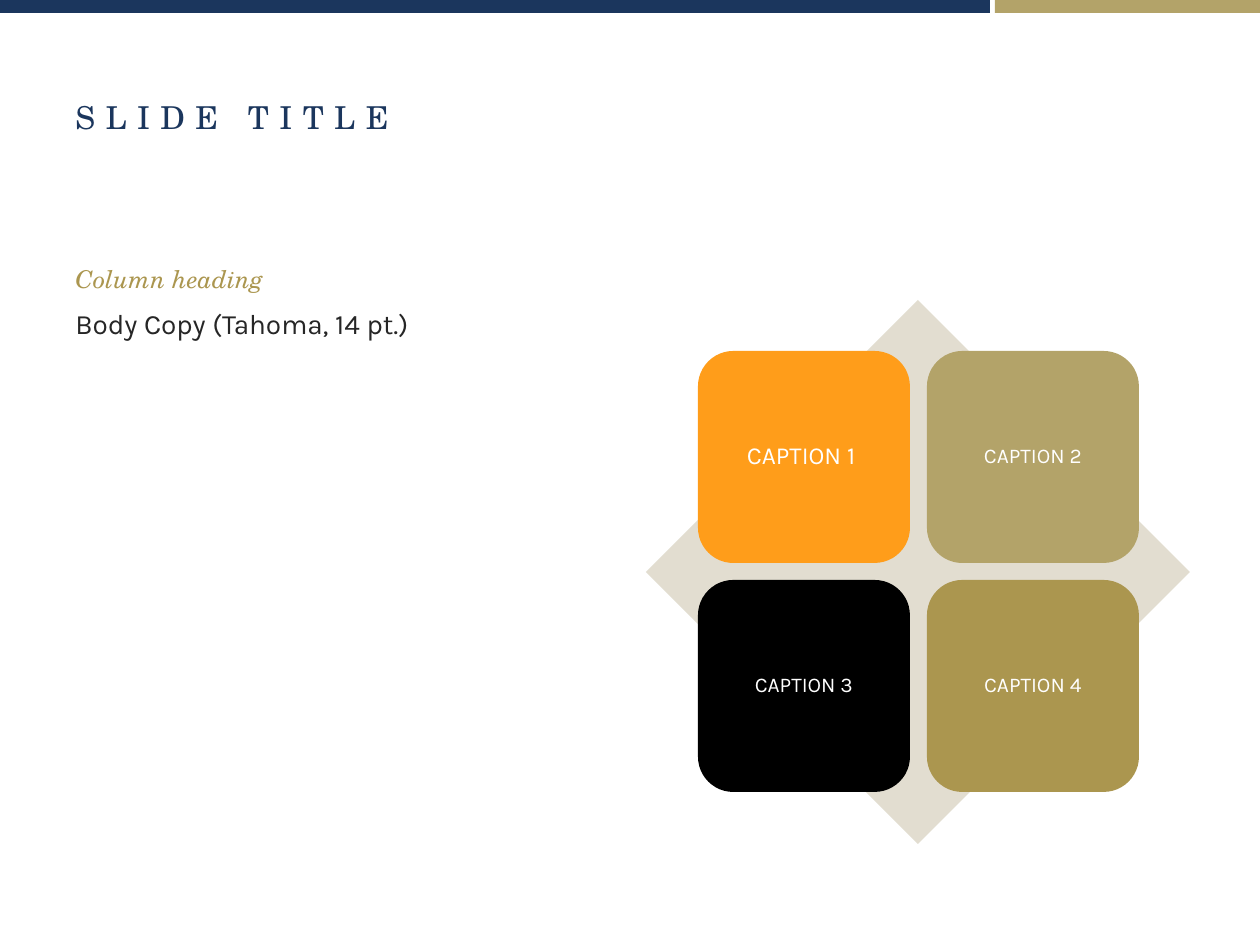
"""Build a title slide with a text column and a four-caption matrix."""
from pptx import Presentation
from pptx.dml.color import RGBColor
from pptx.enum.shapes import MSO_SHAPE
from pptx.enum.text import MSO_ANCHOR, PP_ALIGN
from pptx.util import Emu, Pt

PX = 914400 // 126
NAVY = RGBColor(0x1B, 0x36, 0x5D)
GOLD = RGBColor(0xB3, 0xA3, 0x69)
OCHRE = RGBColor(0xAB, 0x96, 0x4F)
ORANGE = RGBColor(0xFF, 0x9D, 0x1A)
SAND = RGBColor(0xE2, 0xDD, 0xD0)
INK = RGBColor(0x26, 0x26, 0x26)
BLACK = RGBColor(0, 0, 0)
WHITE = RGBColor(0xFF, 0xFF, 0xFF)
SERIF, SANS = "TeX Gyre Schola", "Karla"


def write(frame, text, size=14, font=SANS, color=INK, italic=False,
          spacing=0, align=PP_ALIGN.LEFT, anchor=MSO_ANCHOR.TOP, leading=1.0):
    frame.word_wrap = True
    frame.vertical_anchor = anchor
    para = frame.paragraphs[0]
    para.alignment = align
    para.line_spacing = leading
    run = para.add_run()
    run.text = text
    run.font.size = Pt(size)
    run.font.name = font
    run.font.italic = italic
    run.font.color.rgb = color
    if spacing:
        run.font._element.set("spc", str(spacing * 100))


class Canvas:
    def __init__(self, deck):
        self.slide = deck.slides.add_slide(deck.slide_layouts[6])

    def shape(self, kind, box, fill):
        item = self.slide.shapes.add_shape(kind, *(Emu(n * PX) for n in box))
        item.shadow.inherit = False
        item.fill.solid()
        item.fill.fore_color.rgb = fill
        item.line.fill.background()
        return item

    def text(self, box, words, **style):
        item = self.slide.shapes.add_textbox(*(Emu(n * PX) for n in box))
        write(item.text_frame, words, **style)

    def tile(self, box, words, fill, size):
        item = self.shape(MSO_SHAPE.ROUNDED_RECTANGLE, box, fill)
        write(item.text_frame, words, size=size, color=WHITE, leading=0.9,
              align=PP_ALIGN.CENTER, anchor=MSO_ANCHOR.MIDDLE)


def main():
    deck = Presentation()
    deck.slide_width, deck.slide_height = Emu(1260 * PX), Emu(945 * PX)
    page = Canvas(deck)

    page.shape(MSO_SHAPE.RECTANGLE, (0, 0, 990, 13), NAVY)
    page.shape(MSO_SHAPE.RECTANGLE, (995, 0, 265, 13), GOLD)
    page.text((63, 38, 1134, 158), "SLIDE TITLE", size=18, font=SERIF,
              color=NAVY, spacing=6, anchor=MSO_ANCHOR.MIDDLE)
    page.text((63, 212, 557, 88), "Column heading", font=SERIF,
              color=OCHRE, italic=True, anchor=MSO_ANCHOR.BOTTOM)
    page.text((63, 300, 557, 544), "Body Copy (Tahoma, 14 pt.)", size=16)

    page.shape(MSO_SHAPE.DIAMOND, (646, 300, 544, 544), SAND)
    tiles = [("CAPTION 1 ", ORANGE, 14), ("CAPTION 2", GOLD, 12),
             ("CAPTION 3", BLACK, 12), ("CAPTION 4", OCHRE, 12)]
    side, step = 212, 229
    for i, (words, fill, size) in enumerate(tiles):
        row, col = divmod(i, 2)
        box = (698 + col * step, 351 + row * step, side, side)
        page.tile(box, words, fill, size)

    deck.save("out.pptx")


if __name__ == "__main__":
    main()
